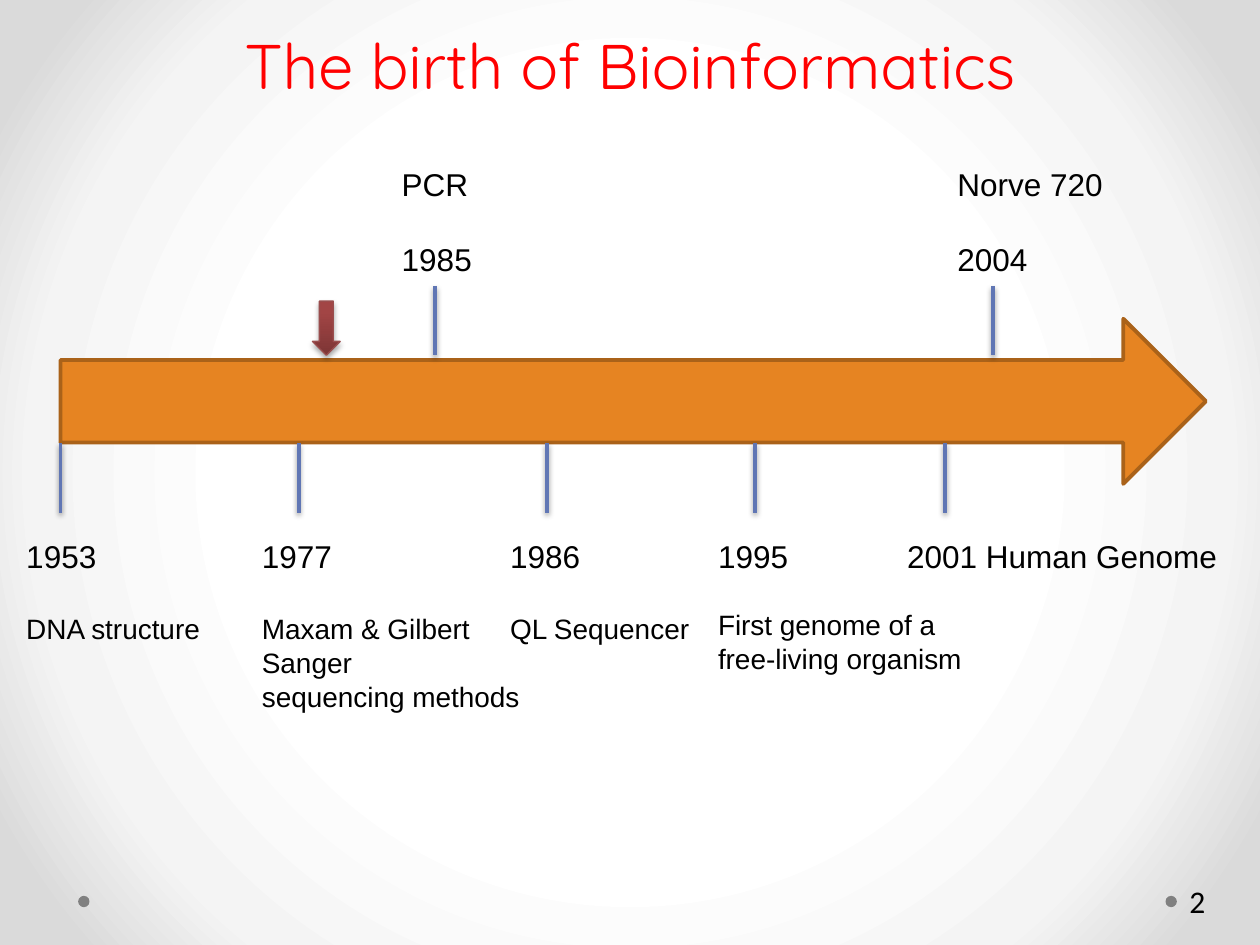
from lxml import etree
from pptx import Presentation
from pptx.dml.color import RGBColor
from pptx.enum import shapes, text
from pptx.oxml import parse_xml
from pptx.oxml.ns import nsdecls, qn
from pptx.util import Inches, Pt

# Content: tick x, label left, label width, year or name, detail lines
TITLE = "The birth of Bioinformatics"
PAGE = "2"
ABOVE = [
    (3.45, 3.09, 0.76, "PCR", "1985"),
    (7.88, 7.5, 1.42, "Norve 720", "2004"),
]
BELOW = [
    (0.48, 0.11, 1.71, "1953", ["DNA structure"]),
    (2.37, 1.98, 2.28, "1977", ["Maxam & Gilbert", "Sanger", "sequencing methods"]),
    (4.34, 3.95, 2.28, "1986", ["QL Sequencer"]),
    (5.99, 5.6, 2.28, "1995", ["First genome of a free-living organism"]),
    (7.5, 7.1, 2.75, "2001 Human Genome", []),
]
TIGHT_GAP = {"1995"}  # labels with a smaller gap under the year

THEME = {
    "title": "FF0000", "text": "000000", "dot": "808080", "tick": "6076B4",
    "arrow": "E68422", "arrow_line": "AA6219", "marker_line": "9A4E4E",
    "backdrop": [(50, "FFFFFF"), (76, "F4F4F4"), (92, "DADADA")],
    "marker": [(0, "7D3535"), (80, "A24545"), (100, "A44343")],
    "title_font": "Quicksand", "body_font": "Arial", "page_font": "Calibri",
    "title_size": 36, "label_size": 18, "detail_size": 16,
}
LINE_FACTOR = 1.19  # gap height per point of type
TICK = 0.55
ABOVE_TICK_Y, BELOW_TICK_Y = 2.27, 3.52
ABOVE_LABEL_Y, BELOW_LABEL_Y = 1.26, 4.21


def rgb(name):
    return RGBColor.from_string(THEME[name])


def gradient(stops, shade):
    gs = "".join(f'<a:gs pos="{pos * 1000}"><a:srgbClr val="{color}"/></a:gs>'
                 for pos, color in stops)
    return parse_xml(f'<a:gradFill {nsdecls("a")} rotWithShape="1">'
                     f'<a:gsLst>{gs}</a:gsLst>{shade}</a:gradFill>')


def swap_solid_fill(parent, new_fill):
    parent.replace(parent.find(qn("a:solidFill")), new_fill)


def add_shadow(sp, alpha, blur, dist):
    effects = etree.SubElement(sp._element.spPr, qn("a:effectLst"))
    effects.append(parse_xml(
        f'<a:outerShdw {nsdecls("a")} blurRad="{Pt(blur)}" dist="{Pt(dist)}" '
        f'dir="5400000" rotWithShape="0"><a:srgbClr val="000000">'
        f'<a:alpha val="{alpha * 1000}"/></a:srgbClr></a:outerShdw>'))


def add_preset(s, kind, box, fill, line=None, width=0):
    sp = s.shapes.add_shape(kind, *map(Inches, box))
    sp.shadow.inherit = False
    sp.fill.solid()
    sp.fill.fore_color.rgb = rgb(fill)
    if line:
        sp.line.color.rgb = rgb(line)
        sp.line.width = Pt(width)
    else:
        sp.line.fill.background()
    return sp


def add_tick(s, x, y):
    line = s.shapes.add_connector(shapes.MSO_CONNECTOR.STRAIGHT, Inches(x),
                                  Inches(y), Inches(x), Inches(y + TICK))
    line.line.color.rgb = rgb("tick")
    line.line.width = Pt(2.25)
    add_shadow(line, 38, 3.1, 1.6)


def add_run(p, words, size, font="body_font", color="text"):
    r = p.add_run()
    r.text = words
    r.font.size = Pt(THEME[size])
    r.font.name = THEME[font]
    r.font.color.rgb = rgb(color)


def add_label(s, box, lines, wrap=True, gap="label_size", font="body_font"):
    """Lines are (words, size) pairs; the gap follows the first one."""
    tf = s.shapes.add_textbox(*map(Inches, box)).text_frame
    tf.word_wrap = wrap
    tf.auto_size = text.MSO_AUTO_SIZE.SHAPE_TO_FIT_TEXT
    for i, (words, size) in enumerate(lines):
        p = tf.add_paragraph() if i else tf.paragraphs[0]
        if i == 1:
            p.space_before = Pt(round(THEME[gap] * LINE_FACTOR, 1))
        add_run(p, words, size, font)


def main():
    prs = Presentation()
    prs.slide_width, prs.slide_height = Inches(10), Inches(7.5)
    s = prs.slides.add_slide(prs.slide_layouts[5])

    # Background
    s.background.fill.solid()
    centre = ('<a:path path="circle">'
              '<a:fillToRect l="50000" t="50000" r="50000" b="50000"/></a:path>')
    swap_solid_fill(s.element.find(".//" + qn("p:bgPr")),
                    gradient(THEME["backdrop"], centre))

    # Title
    title = s.shapes.title
    title.left, title.top, title.width, title.height = map(Inches, (0.5, 0.4, 9, 0.46))
    tf = title.text_frame
    tf.auto_size = text.MSO_AUTO_SIZE.NONE
    tf.vertical_anchor = text.MSO_ANCHOR.BOTTOM
    p = tf.paragraphs[0]
    p.alignment = text.PP_ALIGN.CENTER
    p.line_spacing = Pt(58)
    add_run(p, TITLE, "title_size", "title_font", "title")

    # Footer dots and page number
    for x in (0.62, 9.25):
        add_preset(s, shapes.MSO_SHAPE.OVAL, (x, 7.11, 0.09, 0.09), "dot")
    add_label(s, (9.34, 6.95, 0.61, 0.4), [(PAGE, "label_size")], font="page_font")

    # Time arrow and marker
    add_preset(s, shapes.MSO_SHAPE.RIGHT_ARROW, (0.48, 2.53, 9.09, 1.31),
               "arrow", "arrow_line", 2.25)
    marker = s.shapes.add_shape(shapes.MSO_SHAPE.DOWN_ARROW,
                                *map(Inches, (2.48, 2.39, 0.22, 0.43)))
    marker.fill.solid()
    swap_solid_fill(marker._element.spPr,
                    gradient(THEME["marker"], '<a:lin ang="16200000" scaled="0"/>'))
    marker.line.color.rgb = rgb("marker_line")
    marker.line.width = Pt(0.75)
    add_shadow(marker, 35, 3.1, 1.8)

    # Events above the arrow
    for x, left, width, name, year in ABOVE:
        add_tick(s, x, ABOVE_TICK_Y)
        add_label(s, (left, ABOVE_LABEL_Y, width, 1.01),
                  [(name, "label_size"), (year, "label_size")], wrap=False)

    # Events below the arrow
    for x, left, width, year, details in BELOW:
        add_tick(s, x, BELOW_TICK_Y)
        gap = "detail_size" if year in TIGHT_GAP else "label_size"
        lines = [(year, "label_size")] + [(d, "detail_size") for d in details]
        height = 0.4 if not details else 0.71 + 0.27 * len(details)
        add_label(s, (left, BELOW_LABEL_Y, width, height), lines, gap=gap)

    prs.save("out.pptx")


if __name__ == "__main__":
    main()
